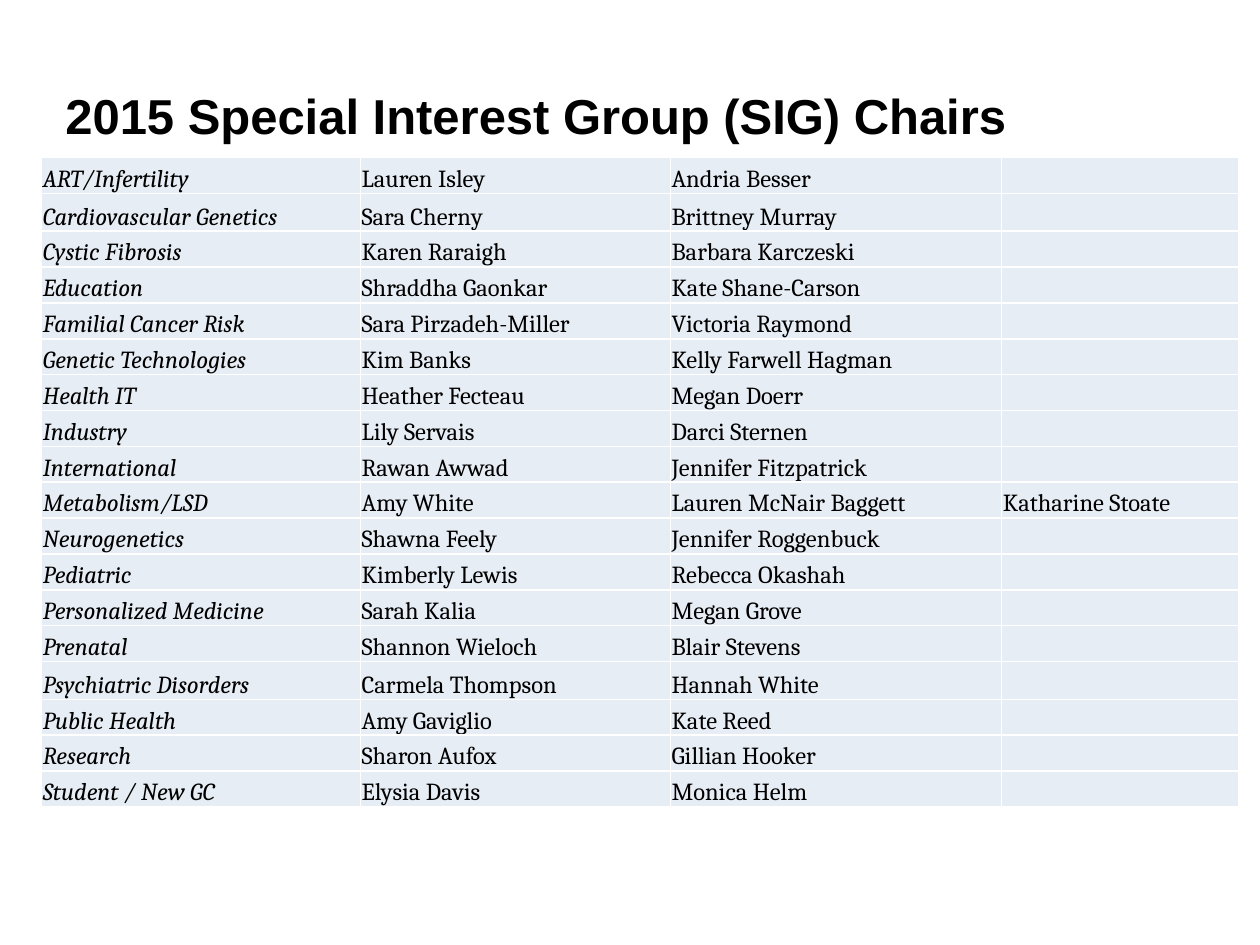
import pptx
import pptx.dml.color
import pptx.enum.text
import pptx.oxml
import pptx.oxml.ns
import pptx.util

COLORS = {"text": "000000", "cell": "E7EDF5", "border": "FFFFFF"}
SLIDE_WIDTH, SLIDE_HEIGHT = 10, 7.5
COLUMN_WIDTHS = [2.53, 2.46, 2.63, 1.88]
TABLE_LEFT, TABLE_TOP, TABLE_HEIGHT = 0.33, 1.25, 5.16
TALL_ROWS, TALL_HEIGHT = {"Cardiovascular Genetics", "Psychiatric Disorders"}, 0.3
NAME_SIZE = 14

CHAIRS = [
    ("ART/Infertility", "Lauren Isley", "Andria Besser"),
    ("Cardiovascular Genetics", "Sara Cherny", "Brittney Murray"),
    ("Cystic Fibrosis", "Karen Raraigh", "Barbara Karczeski"),
    ("Education", "Shraddha Gaonkar", "Kate Shane-Carson"),
    ("Familial Cancer Risk", "Sara Pirzadeh-Miller", "Victoria Raymond"),
    ("Genetic Technologies", "Kim Banks", "Kelly Farwell Hagman"),
    ("Health IT", "Heather Fecteau", "Megan Doerr"),
    ("Industry", "Lily Servais", "Darci Sternen"),
    ("International", "Rawan Awwad", "Jennifer Fitzpatrick"),
    ("Metabolism/LSD", "Amy White", "Lauren McNair Baggett", "Katharine Stoate"),
    ("Neurogenetics", "Shawna Feely", "Jennifer Roggenbuck"),
    ("Pediatric", "Kimberly Lewis", "Rebecca Okashah"),
    ("Personalized Medicine", "Sarah Kalia", "Megan Grove"),
    ("Prenatal", "Shannon Wieloch", "Blair Stevens"),
    ("Psychiatric Disorders", "Carmela Thompson", "Hannah White"),
    ("Public Health", "Amy Gaviglio", "Kate Reed"),
    ("Research", "Sharon Aufox", "Gillian Hooker"),
    ("Student / New GC", "Elysia Davis", "Monica Helm"),
]


def rgb(name):
    return pptx.dml.color.RGBColor.from_string(COLORS[name])


def style_font(paragraph, family, size, bold=False, italic=False):
    font = paragraph.font
    font.name = family
    font.size = pptx.util.Pt(size)
    font.bold = bold
    font.italic = italic
    font.color.rgb = rgb("text")


def add_heading(slide, wording):
    inches = pptx.util.Inches
    heading = slide.shapes.add_textbox(inches(0.42), inches(0.58), inches(9.25), inches(0.75))
    frame = heading.text_frame
    frame.word_wrap = True
    frame.vertical_anchor = pptx.enum.text.MSO_ANCHOR.MIDDLE
    line = frame.paragraphs[0]
    line.text = wording
    line.line_spacing = 0.8
    style_font(line, "Arial", 28, bold=True)


def add_borders(cell):
    properties = cell._tc.get_or_add_tcPr()
    for side in ("lnL", "lnR", "lnT", "lnB"):
        properties.append(pptx.oxml.parse_xml(
            f'<a:{side} {pptx.oxml.ns.nsdecls("a")} w="{pptx.util.Pt(1)}"><a:solidFill>'
            f'<a:srgbClr val="{COLORS["border"]}"/></a:solidFill></a:{side}>'))


def fill_cell(cell, wording, italic):
    add_borders(cell)
    cell.fill.solid()
    cell.fill.fore_color.rgb = rgb("cell")
    cell.margin_left = cell.margin_right = cell.margin_top = pptx.util.Inches(0.01)
    cell.margin_bottom = 0
    cell.vertical_anchor = pptx.enum.text.MSO_ANCHOR.BOTTOM
    entry = cell.text_frame.paragraphs[0]
    style_font(entry, "Cambria", NAME_SIZE, italic=italic)
    if wording:
        entry.text = wording
    else:
        entry._p.append(pptx.oxml.parse_xml(
            f'<a:endParaRPr {pptx.oxml.ns.nsdecls("a")} sz="{NAME_SIZE * 100}"/>'))


def add_chairs_table(slide):
    inches = pptx.util.Inches
    table = slide.shapes.add_table(
        len(CHAIRS), len(COLUMN_WIDTHS), inches(TABLE_LEFT), inches(TABLE_TOP),
        inches(sum(COLUMN_WIDTHS)), inches(TABLE_HEIGHT)).table
    table.first_row = table.horz_banding = False
    for column, width in zip(table.columns, COLUMN_WIDTHS):
        column.width = inches(width)
    regular_height = ((TABLE_HEIGHT - len(TALL_ROWS) * TALL_HEIGHT)
                      / (len(CHAIRS) - len(TALL_ROWS)))
    for row, group in zip(table.rows, CHAIRS):
        row.height = inches(TALL_HEIGHT if group[0] in TALL_ROWS else regular_height)
        for index, cell in enumerate(row.cells):
            fill_cell(cell, group[index] if index < len(group) else "", italic=index == 0)


def main():
    deck = pptx.Presentation()
    deck.slide_width = pptx.util.Inches(SLIDE_WIDTH)
    deck.slide_height = pptx.util.Inches(SLIDE_HEIGHT)
    slide = deck.slides.add_slide(deck.slide_layouts[6])
    add_heading(slide, "2015 Special Interest Group (SIG) Chairs")
    add_chairs_table(slide)
    deck.save("out.pptx")


if __name__ == "__main__":
    main()
